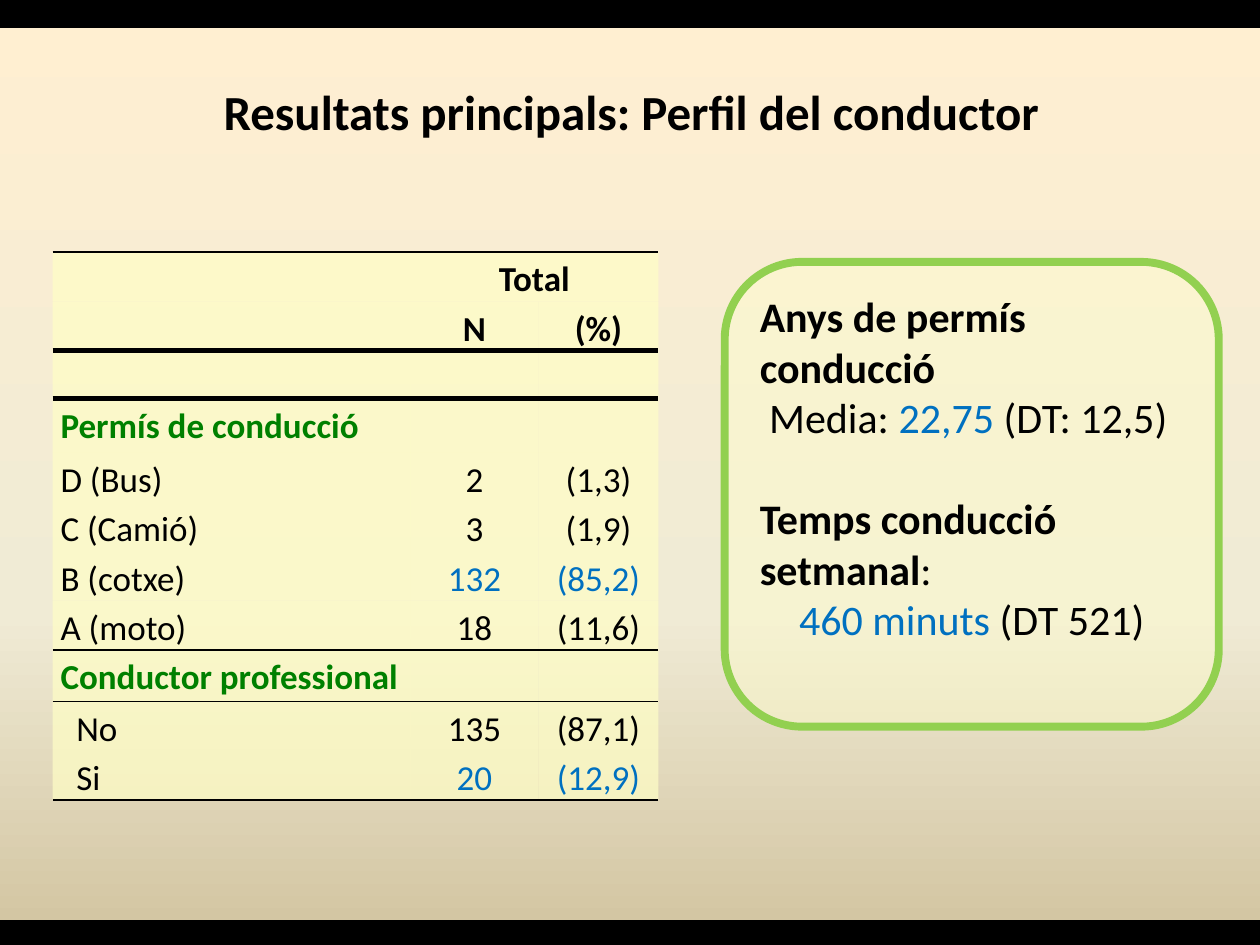
"""Build the driver profile results slide: a table beside a rounded summary panel."""
from copy import deepcopy
from dataclasses import dataclass

from lxml import etree
from pptx import Presentation
from pptx.dml.color import RGBColor
from pptx.enum.shapes import MSO_SHAPE
from pptx.enum.text import MSO_ANCHOR, PP_ALIGN
from pptx.oxml.ns import qn
from pptx.util import Cm, Pt

RECTANGLE, ROUNDED = MSO_SHAPE.RECTANGLE, MSO_SHAPE.ROUNDED_RECTANGLE
TOP = MSO_ANCHOR.TOP
LEFT, CENTER, JUSTIFY = PP_ALIGN.LEFT, PP_ALIGN.CENTER, PP_ALIGN.JUSTIFY

FONT = "Calibri"
COLORS = {
    "black": "000000", "blue": "0070C0", "green": "008000", "border": "92D050",
    "cell": "FFFEC6", "panel": "FFFFCC",
}
BACKGROUND_STOPS = [(0, "FFEFD1"), (0.65, "F0EBD5"), (1, "D1C39F")]
PLAIN_TABLE_STYLE = "{2D5ABB26-0587-4C30-8999-92F81FD0307C}"
COLUMN_WIDTHS = [7.21, 2.59, 2.41]
CELL_MARGIN = 0.16


@dataclass
class Span:
    text: str
    color: str = "black"
    bold: bool = False


@dataclass
class Line:
    spans: list[Span]
    align: PP_ALIGN = LEFT
    size: float = 24
    indent: float = 0
    space_before: float = 0
    spacing: float = 1.0


@dataclass
class Row:
    height: float
    labels: tuple[str, ...] = ()
    counts: tuple[str, ...] = ()
    shares: tuple[str, ...] = ()
    label_color: str = "black"
    bold: bool = False
    highlight: int = -1
    indent: float = 0
    rule_below: float = 0


ROWS = [
    Row(0.97, counts=("Total",), bold=True),
    Row(0.97, counts=("N",), shares=("(%)",), bold=True, rule_below=3),
    Row(0.97),
    Row(1.09, ("Permís de conducció",), label_color="green", bold=True),
    Row(2.92, ("D (Bus)", "C (Camió)", "B (cotxe)"), ("2", "3", "132"),
        ("(1,3)", "(1,9)", "(85,2)"), highlight=2),
    Row(0.97, ("A (moto)",), ("18",), ("(11,6)",), rule_below=1),
    Row(1.04, ("Conductor professional",), label_color="green", bold=True),
    Row(0.97, ("No",), ("135",), ("(87,1)",), indent=0.32),
    Row(0.97, ("Si",), ("20",), ("(12,9)",), highlight=0, indent=0.32, rule_below=1),
]

PANEL_LINES = [
    Line([Span("Anys de permís", bold=True)]),
    Line([Span("conducció", bold=True)]),
    Line([Span("Media: "), Span("22,75", "blue"), Span(" (DT: 12,5)")], indent=0.19),
    Line([Span("Temps conducció setmanal", bold=True), Span(":")], space_before=29),
    Line([Span("460 minuts ", "blue"), Span("(DT 521)")], CENTER),
]


def rgb(name: str) -> RGBColor:
    return RGBColor.from_string(COLORS[name])


def style_font(font, span: Span) -> None:
    font.color.rgb = rgb(span.color)
    font.bold = span.bold


def write_lines(frame, lines: list[Line]) -> None:
    for index, line in enumerate(lines):
        para = frame.paragraphs[0] if index == 0 else frame.add_paragraph()
        if line.indent:
            para._p.get_or_add_pPr().set("marL", str(Cm(line.indent)))
        para.alignment = line.align
        para.line_spacing = line.spacing
        para.space_before = Pt(line.space_before)
        para.font.name, para.font.size = FONT, Pt(line.size)
        if len(line.spans) == 1:
            style_font(para.font, line.spans[0])
        for span in line.spans:
            run = para.add_run()
            run.text = span.text
            if len(line.spans) > 1:
                style_font(run.font, span)


def fill_translucent(fill, color: str, percent: int, holder) -> None:
    fill.solid()
    fill.fore_color.rgb = rgb(color)
    tone = holder.find(f"{qn('a:solidFill')}/{qn('a:srgbClr')}")
    etree.SubElement(tone, qn("a:alpha")).set("val", str(percent * 1000))


def add_outlined(slide, kind, left: float, top: float, width: float, height: float,
                 line_color: str, line_width: float):
    shape = slide.shapes.add_shape(kind, Cm(left), Cm(top), Cm(width), Cm(height))
    shape.shadow.inherit = False
    shape.line.color.rgb = rgb(line_color)
    shape.line.width = Pt(line_width)
    return shape


def add_rule(cell, edge: str, width: float) -> None:
    rule = etree.SubElement(cell._tc.get_or_add_tcPr(), qn(f"a:{edge}"), w=str(Pt(width)))
    solid = etree.SubElement(rule, qn("a:solidFill"))
    etree.SubElement(solid, qn("a:srgbClr"), val=COLORS["black"])


def fill_cell(cell, row: Row, column: int, rule_above: float) -> None:
    cell.margin_left = Cm(CELL_MARGIN + (0 if column else row.indent))
    cell.margin_right = Cm(CELL_MARGIN)
    cell.margin_top = cell.margin_bottom = 0
    for edge, width in (("lnT", rule_above), ("lnB", row.rule_below)):
        if width:
            add_rule(cell, edge, width)
    fill_translucent(cell.fill, "cell", 71, cell._tc.get_or_add_tcPr())
    lines = []
    for index, text in enumerate((row.labels, row.counts, row.shares)[column]):
        value_color = "blue" if index == row.highlight else "black"
        color = value_color if column else row.label_color
        align = CENTER if column else JUSTIFY
        lines.append(Line([Span(text, color, row.bold)], align, 20, spacing=1.15))
    write_lines(cell.text_frame, lines)


def add_results_table(slide) -> None:
    frame = slide.shapes.add_table(
        len(ROWS), len(COLUMN_WIDTHS), Cm(1.06), Cm(5.08),
        Cm(sum(COLUMN_WIDTHS)), Cm(sum(row.height for row in ROWS)))
    table = frame.table
    table.first_row = table.horz_banding = False
    table._tbl.tblPr.find(qn("a:tableStyleId")).text = PLAIN_TABLE_STYLE
    for column, width in zip(table.columns, COLUMN_WIDTHS):
        column.width = Cm(width)
    rule_above = 1.5
    for index, row in enumerate(ROWS):
        table.rows[index].height = Cm(row.height)
        for column in range(len(COLUMN_WIDTHS)):
            fill_cell(table.cell(index, column), row, column, rule_above)
        rule_above = row.rule_below
    table.cell(0, 1).merge(table.cell(0, 2))


def paint_background(slide) -> None:
    fill = slide.background.fill
    fill.gradient()
    fill.gradient_angle = 270
    stop_list = slide._element.find(f".//{qn('a:gsLst')}")
    stop_list.append(deepcopy(stop_list[-1]))
    for stop, (position, color) in zip(fill.gradient_stops, BACKGROUND_STOPS):
        stop.position = position
        stop.color.rgb = RGBColor.from_string(color)


def main() -> None:
    deck = Presentation()
    deck.slide_width, deck.slide_height = Cm(25.4), Cm(19.05)
    slide = deck.slides.add_slide(deck.slide_layouts[6])
    paint_background(slide)
    for top in (0, 18.59):
        band = add_outlined(slide, RECTANGLE, 0, top, 25.4, 0.53, "black", 2)
        band.fill.solid()
        band.fill.fore_color.rgb = rgb("black")
    add_results_table(slide)
    panel = add_outlined(slide, ROUNDED, 14.61, 5.28, 9.96, 9.37, "border", 4.5)
    fill_translucent(panel.fill, "panel", 40, panel._element.spPr)
    panel.text_frame.word_wrap = True
    panel.text_frame.vertical_anchor = TOP
    write_lines(panel.text_frame, PANEL_LINES)
    title = slide.shapes.add_textbox(Cm(1.32), Cm(1.52), Cm(22.81), Cm(1.45))
    title.text_frame.word_wrap = True
    heading = Span("Resultats principals: Perfil del conductor", bold=True)
    write_lines(title.text_frame, [Line([heading], CENTER, 28)])
    deck.save("out.pptx")


if __name__ == "__main__":
    main()
